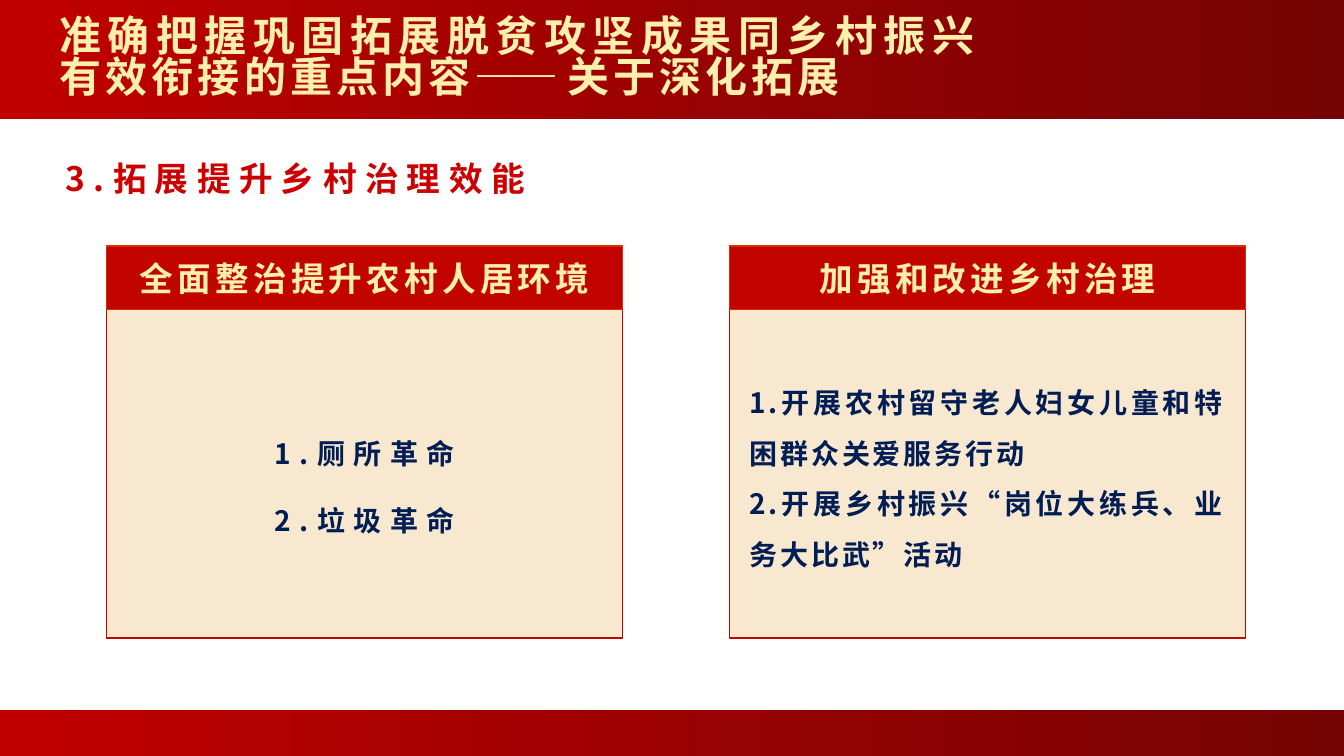
from lxml.etree import SubElement
from pptx import Presentation
from pptx.dml.color import RGBColor
from pptx.enum.shapes import MSO_SHAPE
from pptx.enum.text import MSO_ANCHOR, PP_ALIGN
from pptx.oxml.ns import qn
from pptx.util import Cm, Pt

FONT = "Noto Sans CJK SC"
RED = RGBColor(0xC2, 0x04, 0x00)
EDGE = RGBColor(0xDC, 0x2C, 0x00)
START = RGBColor(0xC0, 0x00, 0x00)
END = RGBColor(0x76, 0x03, 0x03)
BRIGHT = RGBColor(0xCC, 0x00, 0x00)
CREAM = RGBColor(0xF9, 0xE8, 0xD0)
GOLD = RGBColor(0xFE, 0xEF, 0xAC)
NAVY = RGBColor(0x00, 0x1D, 0x54)
WIDTH = 33.87


def add_box(slide, kind, left, top, width, height):
    shape = slide.shapes.add_shape(kind, Cm(left), Cm(top), Cm(width), Cm(height))
    shape.shadow.inherit = False
    return shape


def add_band(slide, top, height):
    band = add_box(slide, MSO_SHAPE.RECTANGLE, 0, top, WIDTH, height)
    band.line.fill.background()
    band.fill.gradient()
    band.fill.gradient_angle = 0
    for stop, place, color in zip(band.fill.gradient_stops, (0, 1), (START, END)):
        stop.position = place
        stop.color.rgb = color


def add_panel(slide, kind, left, top, width, height, fill, edge, weight):
    panel = add_box(slide, kind, left, top, width, height)
    panel.fill.solid()
    panel.fill.fore_color.rgb = fill
    panel.line.color.rgb = edge
    panel.line.width = Pt(weight)
    return panel


def add_run(para, text, size, color, gap):
    run = para.add_run()
    run.text = text
    font = run.font
    font.name = FONT
    font.size = Pt(size)
    font.bold = True
    font.color.rgb = color
    props = run._r.get_or_add_rPr()
    props.set("lang", "zh-CN")
    props.set("spc", str(gap * 100))
    SubElement(props, qn("a:ea")).set("typeface", FONT)


def fill_text(shape, lines, size, color, gap, align, space=1.0, wrap=True):
    frame = shape.text_frame
    frame.word_wrap = wrap
    frame.vertical_anchor = MSO_ANCHOR.MIDDLE
    for index, line in enumerate(lines):
        para = frame.add_paragraph() if index else frame.paragraphs[0]
        para.alignment = align
        para.line_spacing = space
        add_run(para, line, size, color, gap)


def add_text(slide, left, top, width, height, inset=(0.25, 0.13, 0.25, 0.13)):
    box = slide.shapes.add_textbox(Cm(left), Cm(top), Cm(width), Cm(height))
    frame = box.text_frame
    (frame.margin_left, frame.margin_top,
     frame.margin_right, frame.margin_bottom) = map(Cm, inset)
    return box


def add_card(slide, left, head, lines, gap, align, space):
    width = 13
    add_panel(slide, MSO_SHAPE.FLOWCHART_PROCESS, left, 6.22, width, 9.86, CREAM, RED, 1)
    bar = add_panel(slide, MSO_SHAPE.RECTANGLE, left, 6.2, width, 1.6, RED, EDGE, 0.75)
    fill_text(bar, [head], 24, GOLD, 3, PP_ALIGN.CENTER)
    body = add_text(slide, left, 7.8, width, 8.08, (0.5, 0.13, 0.5, 0.13))
    fill_text(body, lines, 20, NAVY, gap, align, space)


def main():
    deck = Presentation()
    deck.slide_width, deck.slide_height = Cm(WIDTH), Cm(19.05)
    slide = deck.slides.add_slide(deck.slide_layouts[6])
    add_band(slide, 0, 3)
    add_band(slide, 17.9, 1.15)

    title = add_text(slide, 0, 0.2, 24.87, 2.59, (1.5, 0.1, 0.2, 0.1))
    fill_text(title, ["准确把握巩固拓展脱贫攻坚成果同乡村振兴有效衔接的重点内容——关于深化拓展"],
              30, GOLD, 3, PP_ALIGN.JUSTIFY, 0.82)
    topic = add_text(slide, 1.4, 3.66, 12.34, 1.47)
    fill_text(topic, ["3.拓展提升乡村治理效能"], 24, BRIGHT, 6, PP_ALIGN.LEFT, 1.2, False)

    add_card(slide, 2.69, "全面整治提升农村人居环境",
             ["1.厕所革命", "2.垃圾革命"], 6, PP_ALIGN.CENTER, 2.0)
    add_card(slide, 18.39, "加强和改进乡村治理",
             ["1.开展农村留守老人妇女儿童和特困群众关爱服务行动",
              "2.开展乡村振兴“岗位大练兵、业务大比武”活动"], 2, PP_ALIGN.JUSTIFY, 1.5)
    deck.save("out.pptx")


if __name__ == "__main__":
    main()
